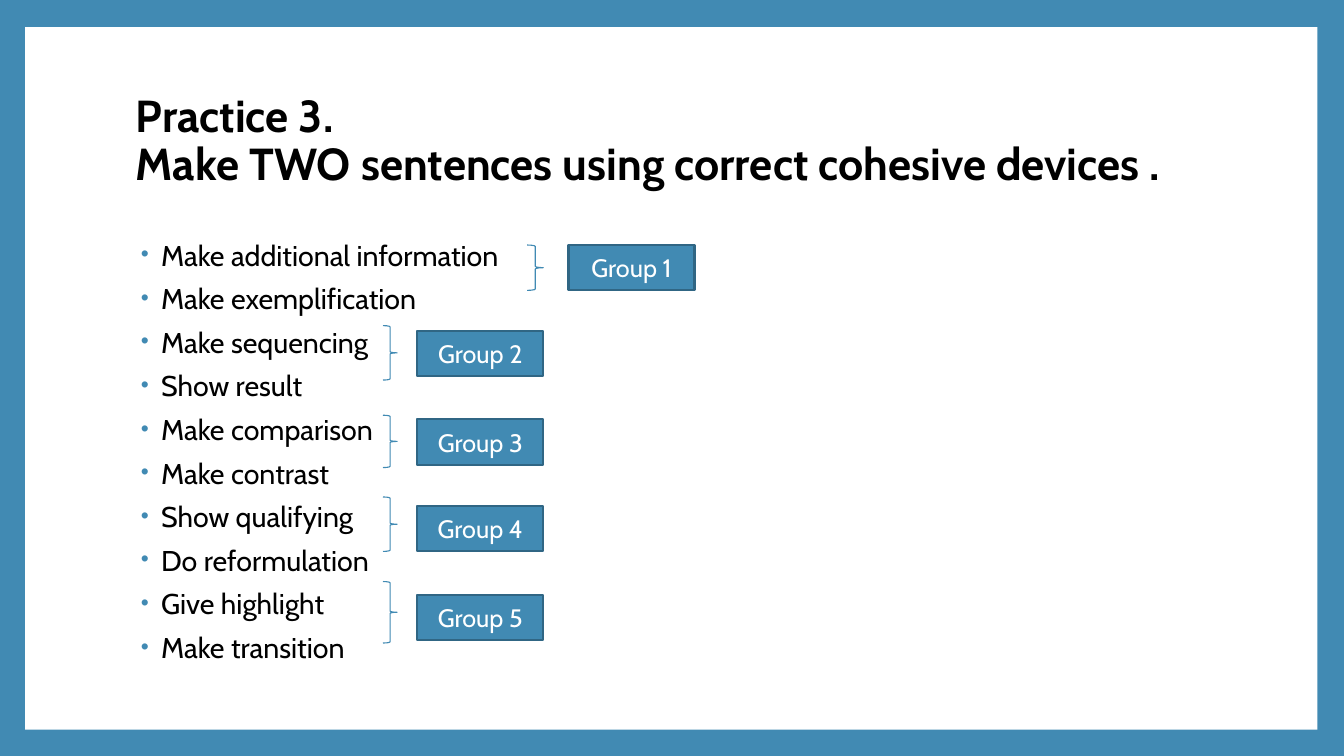
import pptx
import pptx.dml.color
import pptx.enum.shapes
import pptx.enum.text
import pptx.util
import lxml.etree

Pt = pptx.util.Pt
SHAPE = pptx.enum.shapes.MSO_SHAPE
ANCHOR = pptx.enum.text.MSO_ANCHOR
ALIGN = pptx.enum.text.PP_ALIGN
COLORS = {"blue": "418AB3", "edge": "306684", "white": "FFFFFF", "black": "000000"}

TITLE = ["Practice 3.", "Make TWO sentences using correct cohesive devices ."]
TASKS = [
    "Make additional information", "Make exemplification",
    "Make sequencing", "Show result",
    "Make comparison", "Make contrast",
    "Show qualifying", "Do reformulation",
    "Give highlight", "Make transition",
]
BRACES = [
    (376.6, 175, 11.5, 32.4),
    (273.6, 232.6, 10.1, 38.9),
    (273.6, 296.6, 10.1, 37.4),
    (273.6, 355, 10.1, 38.9),
    (273.6, 415.4, 10.1, 43.9),
]
LABELS = [(406.1, 175), (298.1, 236.2), (298.1, 299.5), (298.1, 361.4), (298.1, 424.8)]
LABEL_SIZE = (90, 32.4)


class SlideBuilder:
    """Draw styled elements on one slide."""

    def __init__(self, slide, font="Cabin"):
        self.slide = slide
        self.font = font

    def color(self, name):
        return pptx.dml.color.RGBColor.from_string(COLORS[name])

    def background(self, name):
        fill = self.slide.background.fill
        fill.solid()
        fill.fore_color.rgb = self.color(name)

    def span(self, para, text, size, color, bold=False):
        span = para.add_run()
        span.text = text
        span.font.name = self.font
        span.font.size = Pt(size)
        span.font.bold = bold
        span.font.color.rgb = self.color(color)

    def shape(self, kind, place, fill=None, line=None, width=1.5):
        shape = self.slide.shapes.add_shape(kind, *map(Pt, place))
        shape.shadow.inherit = False
        if fill:
            shape.fill.solid()
            shape.fill.fore_color.rgb = self.color(fill)
        else:
            shape.fill.background()
        if line:
            shape.line.color.rgb = self.color(line)
            shape.line.width = Pt(width)
        else:
            shape.line.fill.background()
        return shape

    def text_box(self, place, anchor):
        frame = self.slide.shapes.add_textbox(*map(Pt, place)).text_frame
        frame.word_wrap = True
        frame.vertical_anchor = anchor
        return frame

    def title(self, place, lines):
        para = self.text_box(place, ANCHOR.MIDDLE).paragraphs[0]
        para.line_spacing = 0.9
        for index, line in enumerate(lines):
            if index:
                para.add_line_break()
            self.span(para, line, 32, "black", True)

    def bullet(self, para):
        properties = para._p.get_or_add_pPr()
        properties.set("marL", str(Pt(18)))
        properties.set("indent", str(Pt(-14.4)))
        namespace = "{http://schemas.openxmlformats.org/drawingml/2006/main}"
        tint = lxml.etree.SubElement(properties, namespace + "buClr")
        lxml.etree.SubElement(tint, namespace + "srgbClr", val=COLORS["blue"])
        lxml.etree.SubElement(properties, namespace + "buSzPct", val="80000")
        lxml.etree.SubElement(properties, namespace + "buFont", typeface="Arial")
        lxml.etree.SubElement(properties, namespace + "buChar", char="•")

    def bullets(self, place, items):
        frame = self.text_box(place, ANCHOR.TOP)
        for index, item in enumerate(items):
            para = frame.add_paragraph() if index else frame.paragraphs[0]
            para.line_spacing = 0.7
            para.space_before = Pt(14)
            self.bullet(para)
            self.span(para, item, 20.4, "black")

    def label(self, place, text):
        box = self.shape(SHAPE.RECTANGLE, place, "blue", "edge")
        box.text_frame.vertical_anchor = ANCHOR.MIDDLE
        para = box.text_frame.paragraphs[0]
        para.alignment = ALIGN.CENTER
        self.span(para, text, 18, "white")


def main():
    deck = pptx.Presentation()
    deck.slide_width, deck.slide_height = Pt(960), Pt(540)
    page = SlideBuilder(deck.slides.add_slide(deck.slide_layouts[6]))
    page.background("blue")
    page.shape(SHAPE.RECTANGLE, (18, 19.4, 923, 501.8), "white")
    page.title((90, 48.2, 777.6, 106.6), TITLE)
    page.bullets((90, 172.8, 777.6, 318.2), TASKS)
    for brace in BRACES:
        page.shape(SHAPE.RIGHT_BRACE, brace, line="blue", width=0.79)
    for number, corner in enumerate(LABELS, 1):
        page.label(corner + LABEL_SIZE, f"Group {number}")
    deck.save("out.pptx")


if __name__ == "__main__":
    main()
